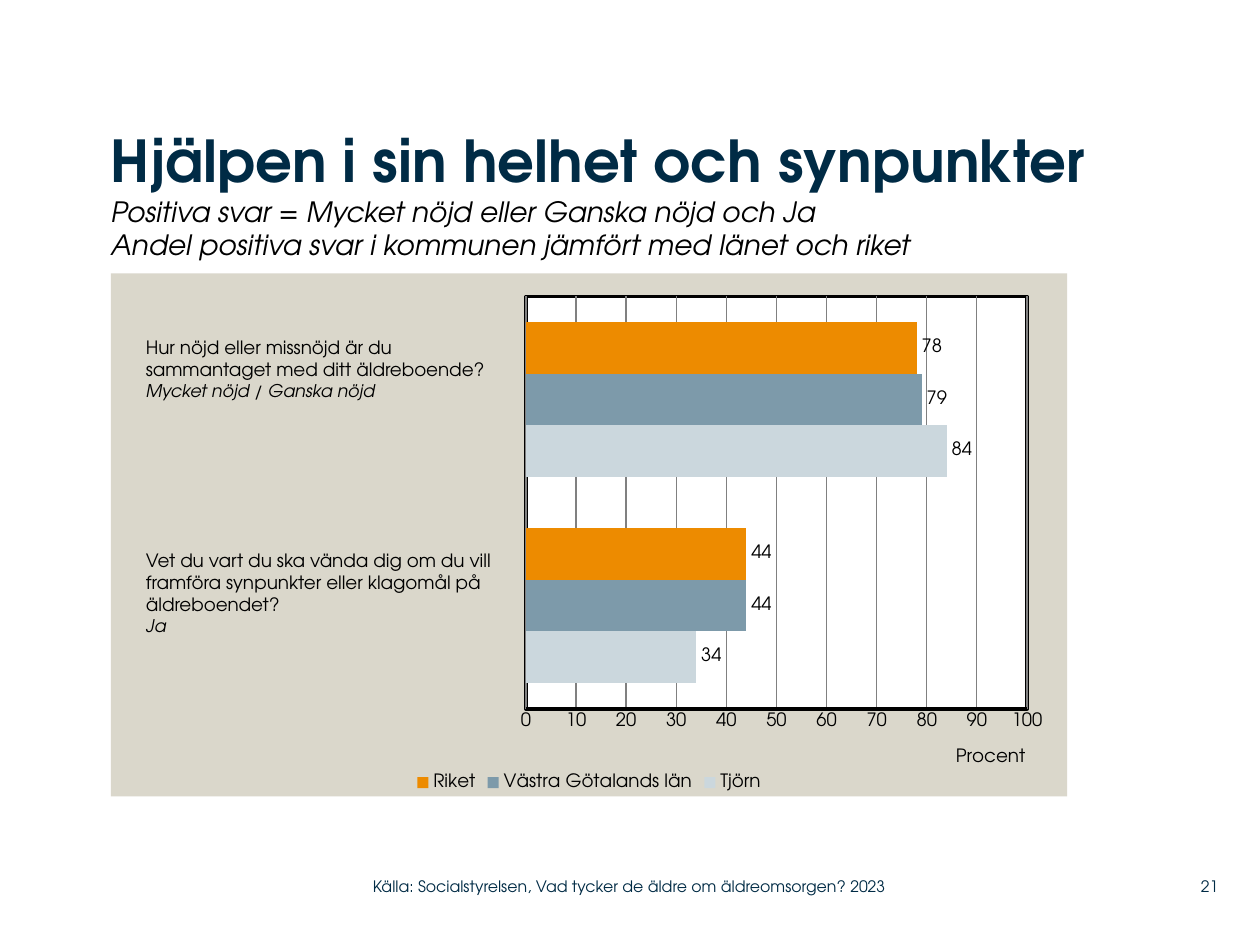
"""Build a slide with a bar chart of survey answers about elderly care."""
from dataclasses import dataclass

from lxml.etree import _Element
from pptx import Presentation
from pptx.chart.data import CategoryChartData
from pptx.dml.color import RGBColor
from pptx.enum.chart import XL_CHART_TYPE, XL_LABEL_POSITION, XL_LEGEND_POSITION, XL_TICK_MARK
from pptx.enum.text import MSO_ANCHOR, MSO_AUTO_SIZE, PP_ALIGN
from pptx.oxml import parse_xml
from pptx.oxml.ns import nsdecls, qn
from pptx.slide import Slide
from pptx.util import Inches, Pt

FONT = "TeX Gyre Adventor"
COLORS = {
    "navy": "002B45",
    "black": "000000",
    "white": "FFFFFF",
    "panel": "DAD7CB",
    "grid": "808080",
    "orange": "ED8B00",
    "blue": "7D9AAA",
    "pale": "CBD7DD",
}


@dataclass
class Series:
    name: str
    values: tuple[int, int]
    color: str


@dataclass
class Line:
    text: str
    size: float
    color: str = "black"
    italic: bool = False
    bold: bool = False


@dataclass
class TextBlock:
    left: float
    top: float
    width: float
    height: float
    lines: list[Line]
    footer: bool = False
    align: PP_ALIGN = PP_ALIGN.LEFT


SERIES = [
    Series("Tjörn", (34, 84), "pale"),
    Series("Västra Götalands län", (44, 79), "blue"),
    Series("Riket", (44, 78), "orange"),
]
TITLE_LINES = [
    Line("Hjälpen i sin helhet och synpunkter", 33, "navy", bold=True),
    Line("Positiva svar = Mycket nöjd eller Ganska nöjd och Ja", 16, italic=True),
    Line("Andel positiva svar i kommunen jämfört med länet och riket", 16, italic=True),
]
TEXT_BLOCKS = [
    TextBlock(1.06, 2.62, 3.1, 0.81, [
        Line("Hur nöjd eller missnöjd är du", 10.5),
        Line("sammantaget med ditt äldreboende?", 10.5),
        Line("Mycket nöjd / Ganska nöjd", 10, italic=True),
    ]),
    TextBlock(1.06, 4.31, 3.05, 0.81, [
        Line("Vet du vart du ska vända dig om du vill framföra synpunkter "
             "eller klagomål på äldreboendet?", 10.5),
        Line("Ja", 10, italic=True),
    ]),
    TextBlock(9.2, 6.89, 0.47, 0.29, [Line("21", 9, "navy")], True, PP_ALIGN.RIGHT),
    TextBlock(2.96, 6.89, 4.43, 0.29, [
        Line("Källa: Socialstyrelsen, Vad tycker de äldre om äldreomsorgen? 2023", 9, "navy"),
    ], True),
]


def rgb(name: str) -> RGBColor:
    """Return a palette colour."""
    return RGBColor.from_string(COLORS[name])


def format_font(font, line: Line) -> None:
    """Apply a line's text style to a font."""
    font.name = FONT
    font.size = Pt(line.size)
    font.bold = line.bold
    font.italic = line.italic
    font.color.rgb = rgb(line.color)


def clear_margins(frame) -> None:
    """Remove the insets of a text frame."""
    frame.margin_left = frame.margin_right = frame.margin_top = frame.margin_bottom = 0


def add_title(slide: Slide) -> None:
    """Fill the title placeholder with a heading and two subtitle lines."""
    title = slide.shapes.title
    title.left, title.top = Inches(0.88), Inches(0.99)
    title.width, title.height = Inches(7.79), Inches(1.18)
    frame = title.text_frame
    clear_margins(frame)
    frame.word_wrap = True
    frame.auto_size = MSO_AUTO_SIZE.NONE
    frame.vertical_anchor = MSO_ANCHOR.TOP
    paragraph = frame.paragraphs[0]
    paragraph.alignment = PP_ALIGN.LEFT
    for index, line in enumerate(TITLE_LINES):
        if index:
            paragraph.add_line_break()
        run = paragraph.add_run()
        run.text = line.text
        format_font(run.font, line)


def add_text_block(slide: Slide, block: TextBlock) -> None:
    """Add a text box with one paragraph per line."""
    box = slide.shapes.add_textbox(
        Inches(block.left), Inches(block.top), Inches(block.width), Inches(block.height))
    frame = box.text_frame
    frame.word_wrap = True
    if block.footer:
        clear_margins(frame)
        frame.vertical_anchor = MSO_ANCHOR.MIDDLE
    else:
        frame.auto_size = MSO_AUTO_SIZE.SHAPE_TO_FIT_TEXT
    for index, line in enumerate(block.lines):
        paragraph = frame.add_paragraph() if index else frame.paragraphs[0]
        paragraph.text = line.text
        paragraph.alignment = block.align
        format_font(paragraph.font, line)


def set_layout(parent: _Element, index: int, settings: dict[str, str | float]) -> None:
    """Give a chart part a manual layout at a child index."""
    for layout in parent.findall(qn("c:layout")):
        parent.remove(layout)
    items = "".join(f'<c:{tag} val="{value}"/>' for tag, value in settings.items())
    parent.insert(index, parse_xml(
        f'<c:layout {nsdecls("c")}><c:manualLayout>{items}</c:manualLayout></c:layout>'))


def area_format(fill: str, line: str) -> _Element:
    """Return shape properties for a chart area."""
    return parse_xml(
        f'<c:spPr {nsdecls("c", "a")}><a:solidFill><a:srgbClr val="{COLORS[fill]}"/>'
        f'</a:solidFill>{line}</c:spPr>')


def add_survey_chart(slide: Slide) -> None:
    """Add the clustered bar chart on its shaded panel."""
    data = CategoryChartData()
    data.categories = ["1", "2"]
    for series in SERIES:
        data.add_series(series.name, series.values)
    chart = slide.shapes.add_chart(
        XL_CHART_TYPE.BAR_CLUSTERED, Inches(0.88), Inches(2.17), Inches(7.59), Inches(4.15),
        data).chart
    format_font(chart.font, Line("", 10.5))
    chart.has_title = False
    chart.has_legend = True
    chart.legend.position = XL_LEGEND_POSITION.BOTTOM
    chart.legend.include_in_layout = False
    format_font(chart.legend.font, Line("", 10.5))

    plot = chart.plots[0]
    plot.gap_width = 100
    plot.vary_by_categories = False
    plot.has_data_labels = True
    plot.data_labels.show_value = True
    plot.data_labels.position = XL_LABEL_POSITION.OUTSIDE_END
    for bars, series in zip(plot.series, SERIES):
        bars.format.fill.solid()
        bars.format.fill.fore_color.rgb = rgb(series.color)

    chart.category_axis.visible = False
    axis = chart.value_axis
    axis.minimum_scale, axis.maximum_scale, axis.major_unit = 0, 100, 10
    axis.major_tick_mark = axis.minor_tick_mark = XL_TICK_MARK.NONE
    axis.format.line.color.rgb = rgb("black")
    axis.format.line.width = Pt(2)
    axis.major_gridlines.format.line.color.rgb = rgb("grid")
    axis.major_gridlines.format.line.width = Pt(0.75)
    paragraph = axis.axis_title.text_frame.paragraphs[0]
    paragraph.text = "Procent"
    format_font(paragraph.font, Line("", 10.5))
    set_layout(axis.axis_title.element, 1,
               {"xMode": "edge", "yMode": "edge", "x": 0.88, "y": 0.9})

    chart_element = chart.element.find(qn("c:chart"))
    plot_area = chart_element.find(qn("c:plotArea"))
    set_layout(plot_area, 0, {"layoutTarget": "inner", "xMode": "edge", "yMode": "edge",
                              "x": 0.434, "y": 0.044, "w": 0.524, "h": 0.789})
    border = (f'<a:ln w="{Pt(2)}"><a:solidFill><a:srgbClr val="{COLORS["black"]}"/>'
              '</a:solidFill></a:ln>')
    plot_area.append(area_format("white", border))
    chart_element.addnext(area_format("panel", "<a:ln><a:noFill/></a:ln>"))


def main() -> None:
    """Build and save the presentation."""
    presentation = Presentation()
    presentation.slide_width, presentation.slide_height = Inches(10), Inches(7.5)
    slide = presentation.slides.add_slide(presentation.slide_layouts[5])
    add_survey_chart(slide)
    add_title(slide)
    for block in TEXT_BLOCKS:
        add_text_block(slide, block)
    presentation.save("out.pptx")


if __name__ == "__main__":
    main()
